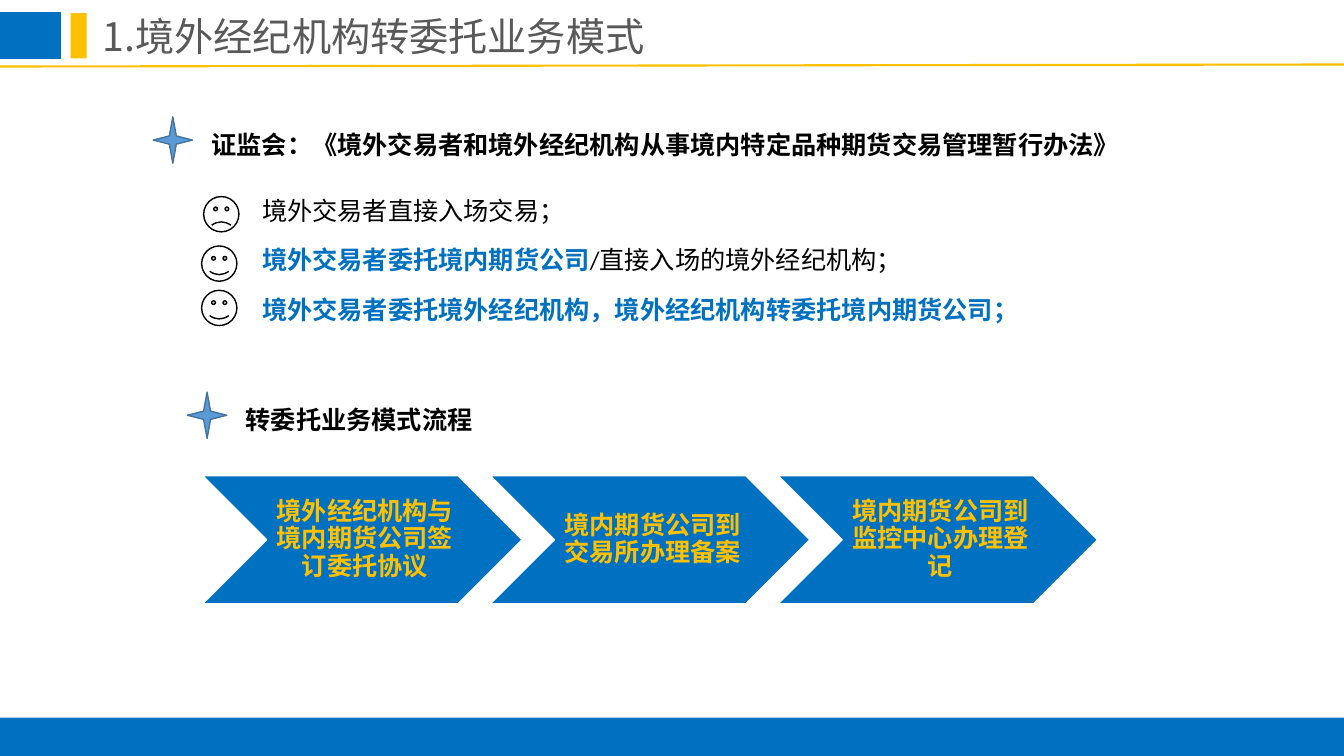
from pptx import Presentation
from pptx.dml.color import RGBColor
from pptx.enum.shapes import MSO_CONNECTOR as Connector, MSO_SHAPE as Shape
from pptx.enum.text import MSO_ANCHOR as Anchor, MSO_AUTO_SIZE as AutoSize, PP_ALIGN as Align
from pptx.oxml.ns import qn
from pptx.util import Inches, Pt
from lxml.etree import SubElement

BLUE, GOLD, BLACK, WHITE = "0070C0", "FFC000", "000000", "FFFFFF"
COLUMNS, ROWS = 80, 45


def rgb(color):
    return RGBColor.from_string(color)


class SlideBuilder:
    """Places elements on an 80 by 45 grid in the house style."""

    def __init__(self, deck):
        self.font, self.size = "Calibri", 18
        self.col, self.row = deck.slide_width / COLUMNS, deck.slide_height / ROWS
        self.slide = deck.slides.add_slide(deck.slide_layouts[1])

    def box(self, x, y, w, h):
        return (round(x * self.col), round(y * self.row),
                round(w * self.col), round(h * self.row))

    def add_text(self, paragraph, text, color, bold=False, size=None, font=None):
        run = paragraph.add_run()
        run.text = text
        run.font.size = Pt(size or self.size)
        run.font.name = font or self.font
        run.font.bold = bold
        run.font.color.rgb = rgb(color)
        east_asian = SubElement(run.font._element, qn("a:ea"))
        east_asian.set("typeface", font or self.font)

    def placeholder(self, index, place, anchor):
        holder = self.slide.placeholders[index]
        holder.left, holder.top, holder.width, holder.height = self.box(*place)
        frame = holder.text_frame
        frame.word_wrap, frame.auto_size = True, AutoSize.NONE
        frame.vertical_anchor = anchor
        return frame

    def title(self, text, *place):
        paragraph = self.placeholder(0, place, Anchor.MIDDLE).paragraphs[0]
        paragraph.alignment = Align.LEFT
        self.add_text(paragraph, text, "595959", size=28, font="Noto Sans CJK SC")

    def options(self, items, *place):
        frame = self.placeholder(1, place, Anchor.TOP)
        for number, runs in enumerate(items):
            paragraph = frame.add_paragraph() if number else frame.paragraphs[0]
            paragraph.line_spacing = 1.0
            paragraph.space_before, paragraph.space_after = Pt(0), Pt(13.5)
            properties = paragraph._p.get_or_add_pPr()
            properties.set("marL", "0")
            properties.set("indent", "0")
            SubElement(properties, qn("a:buNone"))
            for text, color, bold in runs:
                self.add_text(paragraph, text, color, bold)

    def shape(self, kind, place, fill, line=None):
        shape = self.slide.shapes.add_shape(kind, *self.box(*place))
        shape.shadow.inherit = False
        shape.fill.solid()
        shape.fill.fore_color.rgb = rgb(fill)
        if line:
            shape.line.color.rgb = rgb(line)
            shape.line.width = Pt(1)
        else:
            shape.line.fill.background()
        return shape

    def rule(self, x1, y1, x2, y2):
        ends = self.box(x1, y1, x2, y2)
        rule = self.slide.shapes.add_connector(Connector.STRAIGHT, *ends)
        rule.line.color.rgb = rgb(GOLD)
        rule.line.width = Pt(1.5)
        SubElement(rule._element.spPr, qn("a:effectLst"))

    def heading(self, text, x, y, width):
        self.shape(Shape.STAR_4_POINT, (x - 2.88, y - 0.42, 2.34, 2.76), "5B9BD5", "43739E")
        label = self.slide.shapes.add_textbox(*self.box(x, y, width, 2.4))
        label.text_frame.word_wrap = True
        self.add_text(label.text_frame.paragraphs[0], text, BLACK, bold=True)

    def face(self, x, y, smile):
        face = self.shape(Shape.SMILEY_FACE, (x, y, 2.1, 2.1), WHITE, BLACK)
        face.adjustments[0] = smile

    def step(self, text, *place):
        frame = self.shape(Shape.CHEVRON, place, BLUE, WHITE).text_frame
        frame.word_wrap, frame.vertical_anchor = True, Anchor.MIDDLE
        frame.margin_left = Inches(0.08)
        frame.margin_top = frame.margin_right = frame.margin_bottom = Inches(0.03)
        paragraph = frame.paragraphs[0]
        paragraph.alignment, paragraph.line_spacing = Align.CENTER, 0.9
        self.add_text(paragraph, text, GOLD, bold=True)


def main():
    deck = Presentation()
    deck.slide_width, deck.slide_height = Inches(13.33), Inches(7.5)
    page = SlideBuilder(deck)

    # Header and footer bands
    page.rule(0, 3.96, COLUMNS, 3.84)
    page.shape(Shape.RECTANGLE, (0, 0.78, 3.6, 2.7), BLUE, BLUE)
    page.shape(Shape.RECTANGLE, (4.2, 0.78, 0.96, 2.7), GOLD)
    page.shape(Shape.RECTANGLE, (0, 42.72, COLUMNS, 2.28), BLUE)
    page.title("1.境外经纪机构转委托业务模式", 5.52, 0.42, 62.16, 3.42)

    # Regulation and the ways to trade under it
    page.heading("证监会：《境外交易者和境外经纪机构从事境内特定品种期货交易管理暂行办法》",
                 12, 7.38, 57.24)
    page.options([
        [("境外交易者直接入场交易；", BLACK, False)],
        [("境外交易者委托境内期货公司", BLUE, True),
         ("/直接入场的境外经纪机构；", BLACK, False)],
        [("境外交易者委托境外经纪机构，境外经纪机构转委托境内期货公司；", BLUE, True)],
    ], 15, 11.34, 48.84, 8.4)
    for x, y, smile in [(12.12, 11.7, -0.047), (12, 14.64, 0.047), (12, 17.28, 0.047)]:
        page.face(x, y, smile)

    # Process steps
    page.heading("转委托业务模式流程", 14.04, 23.76, 14.82)
    steps = ["境外经纪机构与境内期货公司签订委托协议",
             "境内期货公司到交易所办理备案",
             "境内期货公司到监控中心办理登记"]
    for number, text in enumerate(steps):
        page.step(text, 12.06 + 17.13 * number, 28.32, 19.02, 7.62)

    deck.save("out.pptx")


if __name__ == "__main__":
    main()
